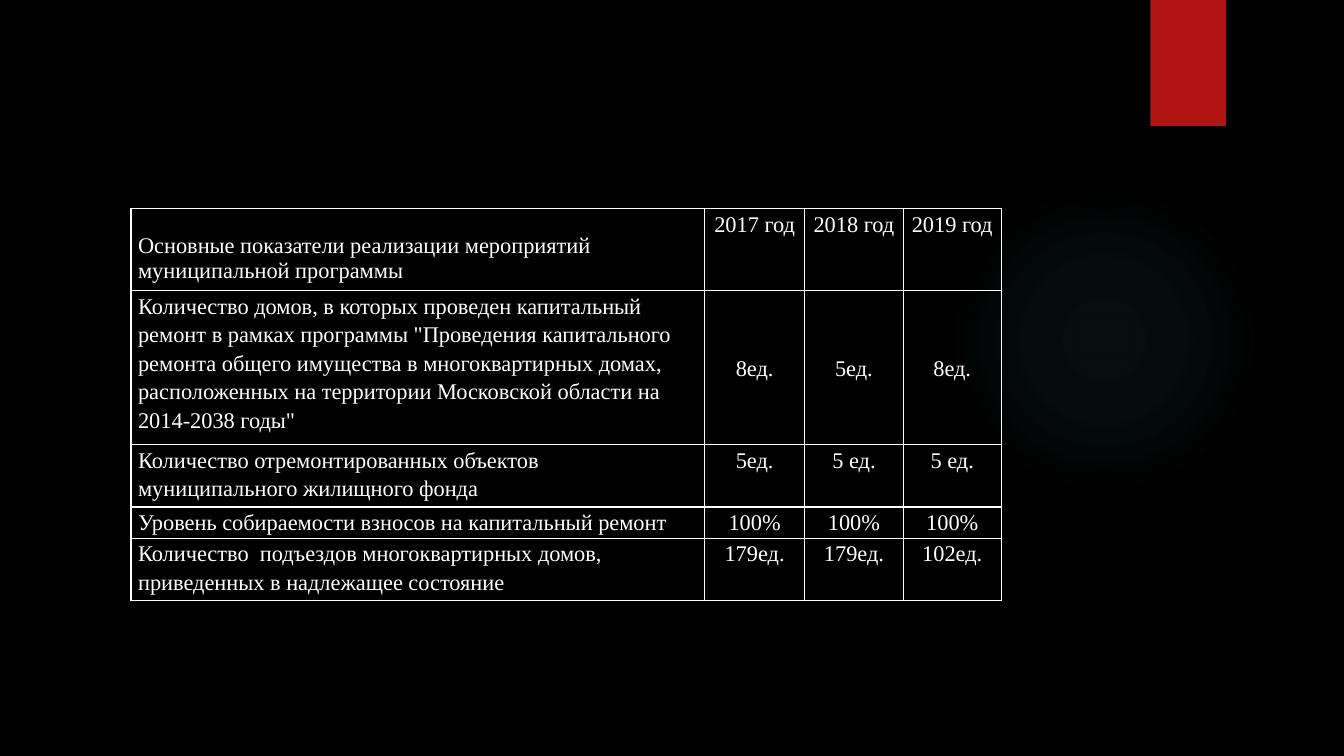
from dataclasses import dataclass
from lxml import etree
from pptx import Presentation
from pptx import util as u
from pptx.dml.color import RGBColor
from pptx.enum import shapes, text
from pptx.oxml import parse_xml
from pptx.oxml.ns import nsdecls, qn


@dataclass(frozen=True)
class Theme:
    back: str = "000000"
    ink: str = "FFFFFF"
    accent: str = "B01513"
    glow: str = "50B9C1"
    font: str = "Times New Roman"
    size: float = 16
    border: float = 1
    spacing: float = 1.15


THEME = Theme()
COLUMNS = (5.69, 0.99, 0.98, 0.97)
ROW_HEIGHTS = (0.81, 1.53, 0.62, 0.31, 0.62)
INDICATORS = (
    ("Основные показатели реализации мероприятий  муниципальной программы",
     "2017 год", "2018 год", "2019 год"),
    ("Количество домов, в которых проведен капитальный ремонт в рамках программы "
     "\"Проведения капитального ремонта общего имущества в многоквартирных домах, "
     "расположенных на территории Московской области на 2014-2038 годы\"",
     "8ед.", "5ед.", "8ед."),
    ("Количество отремонтированных объектов муниципального жилищного фонда",
     "5ед.", "5 ед.", "5 ед."),
    ("Уровень собираемости взносов на капитальный ремонт",
     "100%", "100%", "100%"),
    ("Количество  подъездов многоквартирных домов, приведенных в надлежащее состояние",
     "179ед.", "179ед.", "102ед."),
)


def apply(target, values):
    for name, value in values.items():
        setattr(target, name, value)


def add_plain_shape(page, kind, box):
    shape = page.shapes.add_shape(kind, *map(u.Inches, box))
    shape.shadow.inherit = False
    shape.line.fill.background()
    return shape


def add_glow(page, box):
    glow = add_plain_shape(page, shapes.MSO_SHAPE.OVAL, box)
    stops = "".join(
        f'<a:gs pos="{place * 1000}"><a:srgbClr val="{THEME.glow}">'
        f'<a:alpha val="{alpha * 1000}"/></a:srgbClr></a:gs>'
        for place, alpha in ((0, 7), (36, 6), (69, 0)))
    gradient = parse_xml(
        f'<a:gradFill {nsdecls("a")} rotWithShape="1"><a:gsLst>{stops}</a:gsLst>'
        '<a:path path="circle"><a:fillToRect l="50000" t="50000" r="50000" b="50000"/>'
        '</a:path></a:gradFill>')
    glow._element.spPr.find(qn("a:prstGeom")).addnext(gradient)


def add_ribbon(page, box):
    ribbon = add_plain_shape(page, shapes.MSO_SHAPE.RECTANGLE, box)
    ribbon.fill.solid()
    ribbon.fill.fore_color.rgb = RGBColor.from_string(THEME.accent)


def add_borders(cell):
    properties = cell._tc.get_or_add_tcPr()
    for side in ("lnL", "lnR", "lnT", "lnB"):
        line = etree.SubElement(properties, qn(f"a:{side}"), w=str(u.Pt(THEME.border)))
        fill = etree.SubElement(line, qn("a:solidFill"))
        etree.SubElement(fill, qn("a:srgbClr"), val=THEME.ink)


def fill_cell(cell, words, row, column):
    is_label = column == 0
    is_heading = is_label and row == 0
    add_borders(cell)
    cell.fill.background()
    apply(cell, {
        "margin_left": u.Inches(0.07), "margin_right": u.Inches(0.07),
        "margin_top": u.Inches(0.25 if is_heading else 0), "margin_bottom": 0,
        "vertical_anchor": (text.MSO_ANCHOR.MIDDLE if row == 1 and not is_label
                            else text.MSO_ANCHOR.TOP)})
    para = cell.text_frame.paragraphs[0]
    apply(para, {
        "alignment": text.PP_ALIGN.LEFT if is_label else text.PP_ALIGN.CENTER,
        "line_spacing": 1.0 if is_heading else THEME.spacing})
    span = para.add_run()
    span.text = words
    apply(span.font, {"name": THEME.font, "size": u.Pt(THEME.size), "bold": False})
    span.font.color.rgb = RGBColor.from_string(THEME.ink)


def add_indicator_table(page, left, top):
    box = (left, top, sum(COLUMNS), sum(ROW_HEIGHTS))
    table = page.shapes.add_table(
        len(INDICATORS), len(COLUMNS), *map(u.Inches, box)).table
    apply(table, {"first_row": False, "horz_banding": False})
    for column, width in zip(table.columns, COLUMNS):
        column.width = u.Inches(width)
    for row, height in zip(table.rows, ROW_HEIGHTS):
        row.height = u.Inches(height)
    for row, entries in enumerate(INDICATORS):
        for column, words in enumerate(entries):
            fill_cell(table.cell(row, column), words, row, column)


def main():
    deck = Presentation()
    apply(deck, {"slide_width": u.Inches(13.33), "slide_height": u.Inches(7.5)})
    page = deck.slides.add_slide(deck.slide_layouts.get_by_name("Blank"))
    page.background.fill.solid()
    page.background.fill.fore_color.rgb = RGBColor.from_string(THEME.back)

    # Backdrop
    add_glow(page, (9.41, 1.83, 3.08, 3.08))
    add_ribbon(page, (11.41, 0, 0.75, 1.25))

    # Programme indicators by year
    add_indicator_table(page, 1.3, 2.07)
    deck.save("out.pptx")


if __name__ == "__main__":
    main()
